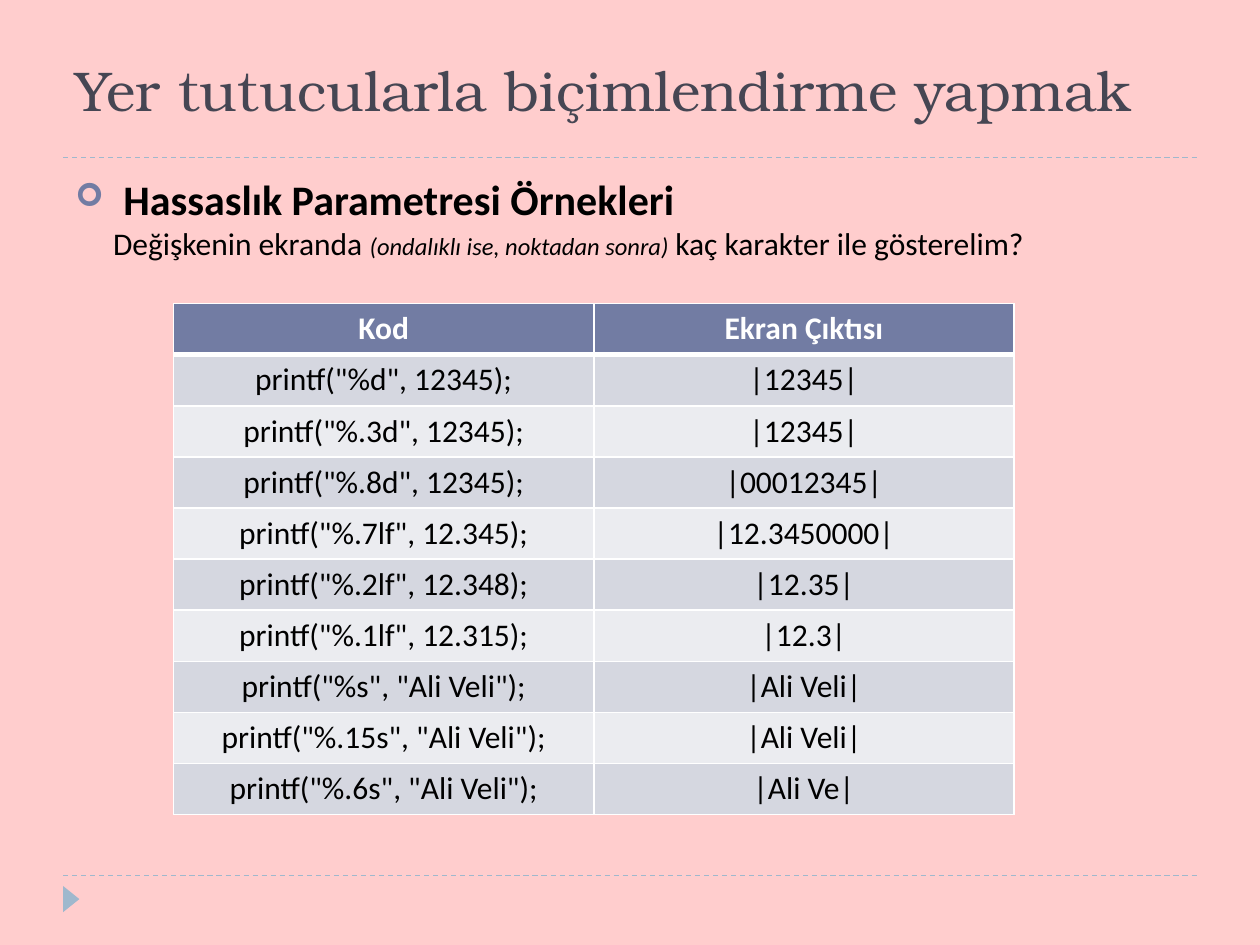
from lxml import etree
from pptx import Presentation, util as u
from pptx.dml.color import RGBColor
from pptx.enum import dml, shapes, text
from pptx.oxml import ns

BODY_FONT = "Calibri"
TITLE_FONT = "TeX Gyre Bonum"
BLACK, WHITE = "000000", "FFFFFF"
HEADER, BAND_DARK, BAND_LIGHT = "727CA3", "D5D7E0", "EBECF0"
ACCENT = "9FB8CD"

ROWS = [
    ("Kod", "Ekran Çıktısı"),
    ('printf("%d", 12345);', "|12345|"),
    ('printf("%.3d", 12345);', "|12345|"),
    ('printf("%.8d", 12345);', "|00012345|"),
    ('printf("%.7lf", 12.345);', "|12.3450000|"),
    ('printf("%.2lf", 12.348);', "|12.35|"),
    ('printf("%.1lf", 12.315);', "|12.3|"),
    ('printf("%s", "Ali Veli");', "|Ali Veli|"),
    ('printf("%.15s", "Ali Veli");', "|Ali Veli|"),
    ('printf("%.6s", "Ali Veli");', "|Ali Ve|"),
]


def color(value):
    return RGBColor.from_string(value)


def sub(parent, tag, **attributes):
    return etree.SubElement(parent, ns.qn(tag), attributes)


def format_run(run, size, font=BODY_FONT, fill=BLACK, bold=False, italic=False):
    run.font.size = u.Pt(size)
    run.font.name = font
    run.font.bold = bold
    run.font.italic = italic
    run.font.color.rgb = color(fill)


def add_divider(slide, y):
    line = slide.shapes.add_connector(
        shapes.MSO_CONNECTOR.STRAIGHT, u.Cm(1.27), u.Cm(y), u.Cm(24.13), u.Cm(y))
    line.line.color.rgb = color(ACCENT)
    line.line.width = u.Pt(0.75)
    line.line.dash_style = dml.MSO_LINE.DASH
    sub(line._element.spPr, "a:effectLst")


def add_page_marker(slide):
    marker = slide.shapes.add_shape(
        shapes.MSO_SHAPE.ISOSCELES_TRIANGLE,
        u.Cm(1.17), u.Cm(17.96), u.Cm(0.53), u.Cm(0.33))
    marker.rotation = 90
    marker.shadow.inherit = False
    marker.fill.solid()
    marker.fill.fore_color.rgb = color(ACCENT)
    marker.line.fill.background()


def set_title(slide, wording):
    title = slide.shapes.title
    title.left, title.top = u.Cm(1.27), u.Cm(0.43)
    title.width, title.height = u.Cm(22.86), u.Cm(2.74)
    frame = title.text_frame
    frame.text = wording
    frame.vertical_anchor = text.MSO_ANCHOR.MIDDLE
    paragraph = frame.paragraphs[0]
    paragraph.alignment = text.PP_ALIGN.LEFT
    format_run(paragraph.runs[0], 32, TITLE_FONT, "464653")


def set_indent(paragraph, margin, first_line):
    properties = paragraph._p.get_or_add_pPr()
    properties.set("marL", str(u.Cm(margin)))
    properties.set("indent", str(u.Cm(first_line)))
    return properties


def add_introduction(slide):
    box = slide.shapes.add_textbox(u.Cm(1.27), u.Cm(3.38), u.Cm(22.86), u.Cm(13.72))
    frame = box.text_frame
    frame.word_wrap = True
    frame.text = "Hassaslık Parametresi Örnekleri"
    heading = frame.paragraphs[0]
    format_run(heading.runs[0], 24, bold=True)
    properties = set_indent(heading, 0.97, -0.97)
    sub(sub(properties, "a:buClr"), "a:srgbClr", val=HEADER)
    sub(properties, "a:buSzPct", val="76000")
    sub(properties, "a:buFont", typeface="Wingdings")
    sub(properties, "a:buChar", char="➢")

    question = frame.add_paragraph()
    question.level = 1
    sub(set_indent(question, 1.73, -0.97), "a:buNone")
    for wording, size, italic in (
            ("Değişkenin ekranda ", 18, False),
            ("(ondalıklı ise, noktadan sonra)", 14, True),
            (" ", 16, False),
            ("kaç karakter ile gösterelim?", 18, False)):
        run = question.add_run()
        run.text = wording
        format_run(run, size, italic=italic)


def set_borders(cell, top, bottom):
    """Draw white borders; top and bottom are widths in points."""
    properties = cell._tc.get_or_add_tcPr()
    sides = (("L", 1), ("R", 1), ("T", top), ("B", bottom))
    for position, (side, width) in enumerate(sides):
        border = sub(properties, f"a:ln{side}", w=str(u.Pt(width)))
        sub(sub(border, "a:solidFill"), "a:srgbClr", val=WHITE)
        properties.insert(position, border)


def add_examples_table(slide):
    table = slide.shapes.add_table(
        len(ROWS), 2, u.Cm(3.5), u.Cm(6.12), u.Cm(16.94), u.Cm(10.3)).table
    for row_index, row in enumerate(ROWS):
        is_header = row_index == 0
        band = BAND_DARK if row_index % 2 else BAND_LIGHT
        for column_index, wording in enumerate(row):
            cell = table.cell(row_index, column_index)
            cell.text = wording
            paragraph = cell.text_frame.paragraphs[0]
            paragraph.alignment = text.PP_ALIGN.CENTER
            format_run(paragraph.runs[0], 18,
                       fill=WHITE if is_header else BLACK, bold=is_header)
            cell.fill.solid()
            cell.fill.fore_color.rgb = color(HEADER if is_header else band)
            set_borders(cell, top=3 if row_index == 1 else 1,
                        bottom=3 if is_header else 1)


def main():
    presentation = Presentation()
    presentation.slide_width, presentation.slide_height = u.Cm(25.4), u.Cm(19.05)
    slide = presentation.slides.add_slide(presentation.slide_layouts[5])
    slide.background.fill.solid()
    slide.background.fill.fore_color.rgb = color("FFCDCD")
    for y in (17.65, 3.18):
        add_divider(slide, y)
    add_page_marker(slide)
    set_title(slide, "Yer tutucularla biçimlendirme yapmak")
    add_introduction(slide)
    add_examples_table(slide)
    presentation.save("out.pptx")


if __name__ == "__main__":
    main()
